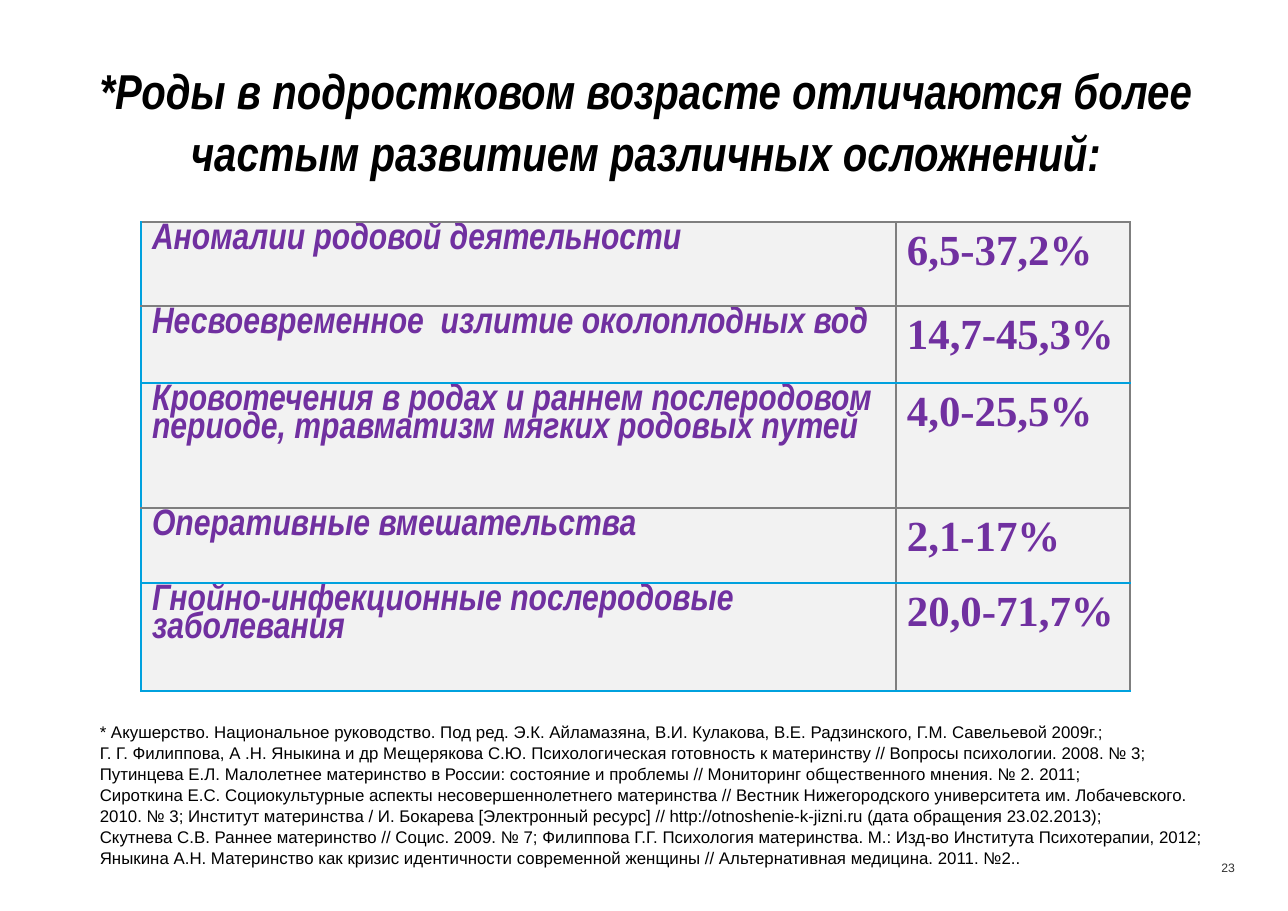
from lxml.etree import SubElement
from pptx import Presentation
from pptx.dml.color import RGBColor
from pptx.enum.text import MSO_ANCHOR as Anchor, MSO_AUTO_SIZE as AutoSize, PP_ALIGN as Align
from pptx.oxml.ns import qn
from pptx.util import Pt

EMU_PER_PX = 8298
BLACK = RGBColor(0x00, 0x00, 0x00)
DARK_GRAY = RGBColor(0x31, 0x31, 0x31)
MID_GRAY = RGBColor(0x7F, 0x7F, 0x7F)
PALE_GRAY = RGBColor(0xF2, 0xF2, 0xF2)
PURPLE = RGBColor(0x70, 0x30, 0xA0)
BLUE = RGBColor(0x00, 0xA1, 0xDE)
NARROW, SERIF, SANS = "Arial Narrow", "Times New Roman", "Arial"

HEADING = "*Роды в подростковом возрасте отличаются более частым развитием различных осложнений:"
COMPLICATIONS = [
    ("Аномалии родовой деятельности", "6,5-37,2%"),
    ("Несвоевременное  излитие околоплодных вод", "14,7-45,3%"),
    ("Кровотечения в родах и раннем послеродовом периоде, травматизм мягких родовых путей", "4,0-25,5%"),
    ("Оперативные вмешательства", "2,1-17%"),
    ("Гнойно-инфекционные послеродовые заболевания", "20,0-71,7%"),
]
COLUMN_WIDTHS = [755, 234]
ROW_HEIGHTS = [84, 77, 125, 75, 108]
BLUE_RULES = {2, 4, 5}  # horizontal rules counted from the top edge
REFERENCES = [
    "* Акушерство. Национальное руководство. Под ред. Э.К. Айламазяна, В.И. Кулакова, В.Е. Радзинского, Г.М. Савельевой 2009г.;",
    "Г. Г. Филиппова, А .Н. Яныкина и др Мещерякова С.Ю. Психологическая готовность к материнству // Вопросы психологии. 2008. № 3;",
    "Путинцева Е.Л. Малолетнее материнство в России: состояние и проблемы // Мониторинг общественного мнения. № 2. 2011;",
    "Сироткина Е.С. Социокультурные аспекты несовершеннолетнего материнства // Вестник Нижегородского университета им. Лобачевского.",
    "2010. № 3; Институт материнства / И. Бокарева [Электронный ресурс] // http://otnoshenie-k-jizni.ru (дата обращения 23.02.2013);",
    "Скутнева С.В. Раннее материнство // Социс. 2009. № 7; Филиппова Г.Г. Психология материнства. М.: Изд-во Института Психотерапии, 2012;",
    "Яныкина А.Н. Материнство как кризис идентичности современной женщины // Альтернативная медицина. 2011. №2..",
]


def px(length):
    return length * EMU_PER_PX


class SlideBuilder:
    def __init__(self, width, height):
        self.deck = Presentation()
        self.deck.slide_width, self.deck.slide_height = px(width), px(height)
        self.slide = self.deck.slides.add_slide(self.deck.slide_layouts[5])

    def fill_text(self, frame, text, font, size, color, bold=False, italic=False,
                  align=Align.LEFT, spacing=1.0):
        frame.text = text
        for paragraph in frame.paragraphs:
            paragraph.alignment = align
            paragraph.line_spacing = spacing
            for run in paragraph.runs:
                run.font.name, run.font.size = font, Pt(size)
                run.font.bold, run.font.italic = bold, italic
                run.font.color.rgb = color

    def clear_insets(self, frame):
        frame.margin_left = frame.margin_right = frame.margin_top = frame.margin_bottom = 0

    def title(self, text, left, top, width, height):
        heading = self.slide.shapes.title
        heading.left, heading.top, heading.width, heading.height = map(px, (left, top, width, height))
        frame = heading.text_frame
        frame.auto_size, frame.vertical_anchor = AutoSize.NONE, Anchor.TOP
        self.clear_insets(frame)
        self.fill_text(frame, text, NARROW, 32, BLACK, True, True, Align.CENTER, 1.07)

    def text(self, text, left, top, width, height, wrap=True, **style):
        frame = self.slide.shapes.add_textbox(*map(px, (left, top, width, height))).text_frame
        frame.word_wrap = wrap
        self.fill_text(frame, text, **style)
        return frame

    def cell_borders(self, cell, colors):
        properties = cell._tc.get_or_add_tcPr()
        for position, (side, color) in enumerate(zip(("lnL", "lnR", "lnT", "lnB"), colors)):
            line = SubElement(properties, qn(f"a:{side}"), w=str(Pt(1)))
            fill = SubElement(line, qn("a:solidFill"))
            SubElement(fill, qn("a:srgbClr"), val=str(color))
            properties.insert(position, line)

    def table(self, rows, left, top):
        size = sum(COLUMN_WIDTHS), sum(ROW_HEIGHTS)
        table = self.slide.shapes.add_table(
            len(rows), len(COLUMN_WIDTHS), *map(px, (left, top, *size))).table
        table.first_row = table.horz_banding = False
        for column, width in zip(table.columns, COLUMN_WIDTHS):
            column.width = px(width)
        for r, (row, height) in enumerate(zip(rows, ROW_HEIGHTS)):
            table.rows[r].height = px(height)
            above, below = (BLUE if rule in BLUE_RULES else MID_GRAY for rule in (r, r + 1))
            for c, text in enumerate(row):
                cell = table.cell(r, c)
                cell.fill.solid()
                cell.fill.fore_color.rgb = PALE_GRAY
                if c == 0:
                    self.fill_text(cell.text_frame, text, NARROW, 24, PURPLE, True, True, spacing=0.8)
                else:
                    self.fill_text(cell.text_frame, text, SERIF, 28, PURPLE, True)
                self.cell_borders(cell, (MID_GRAY if c else BLUE, MID_GRAY, above, below))

    def save(self):
        self.deck.save("out.pptx")


def main():
    page = SlideBuilder(1288, 911)

    # Heading
    page.title(HEADING, 54, 56, 1185, 151)

    # Frequency of complications
    page.table(COMPLICATIONS, 141, 222)

    # References
    page.text("\n".join(REFERENCES), 89, 716, 1143, 154, wrap=False,
              font=SANS, size=11, color=BLACK, spacing=1.04)

    # Page number
    number = page.text("23", 1124, 851, 111, 33, font=SANS, size=8, color=DARK_GRAY, align=Align.RIGHT)
    page.clear_insets(number)
    number.vertical_anchor = Anchor.MIDDLE

    page.save()


if __name__ == "__main__":
    main()
